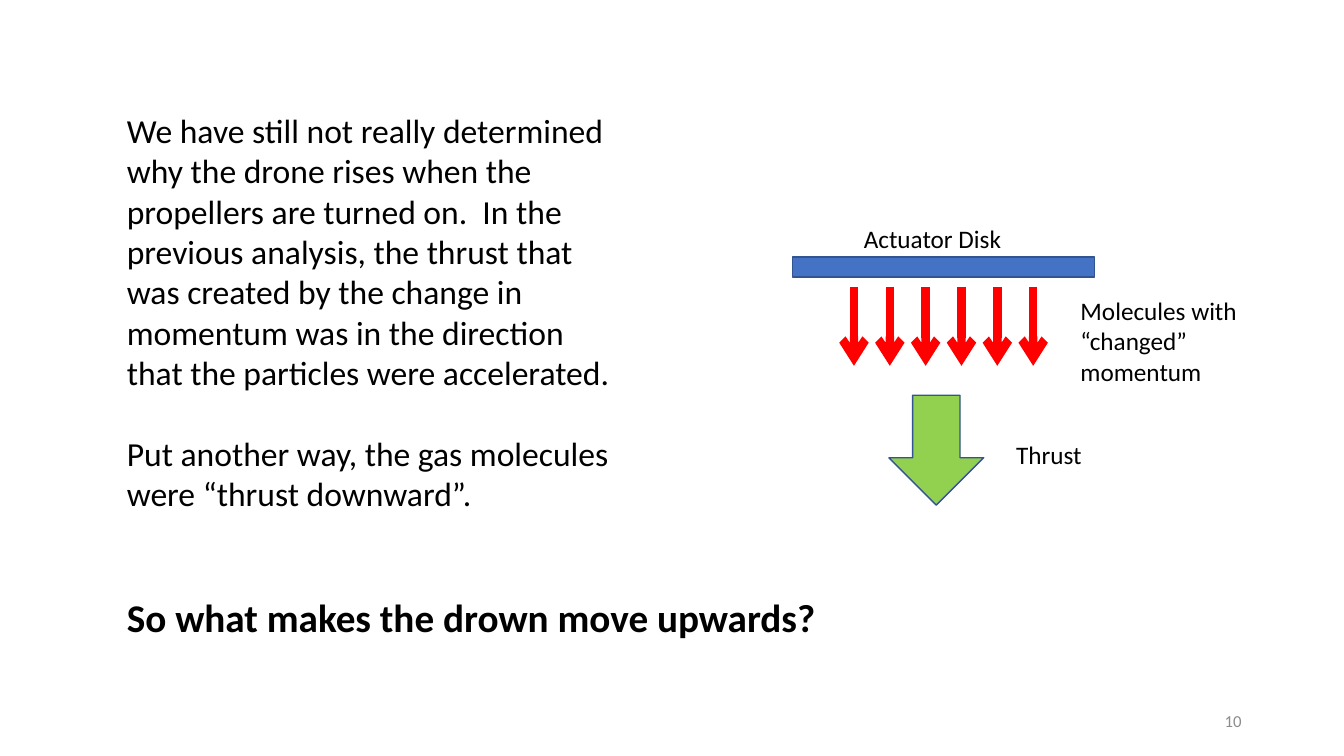
from lxml import etree
from pptx import Presentation
from pptx import util as u
from pptx.dml import color
from pptx.enum import shapes, text
from pptx.oxml import ns

Pt = u.Pt
BLACK, GREY, OUTLINE = "000000", "8C8C8C", "325491"
BLUE, GREEN, RED = "4472C4", "92D050", "FF0000"


def rgb(value):
    return color.RGBColor.from_string(value)


def add_text(page, box, paragraphs, font=None, anchor=text.MSO_ANCHOR.TOP, layout=None):
    frame = page.shapes.add_textbox(*map(Pt, box)).text_frame
    frame.word_wrap = True
    frame.vertical_anchor = anchor
    settings = {"name": "Calibri", "size": Pt(18), **(font or {})}
    ink = settings.pop("ink", BLACK)
    for index, wording in enumerate(paragraphs):
        para = frame.add_paragraph() if index else frame.paragraphs[0]
        for name, value in (layout or {}).items():
            if name != "space_before" or index:
                setattr(para, name, value)
        span = para.add_run()
        span.text = wording
        span.font.color.rgb = rgb(ink)
        for name, value in settings.items():
            setattr(span.font, name, value)


def add_block(page, kind, box, fill):
    block = page.shapes.add_shape(kind, *map(Pt, box))
    block.shadow.inherit = False
    block.fill.solid()
    block.fill.fore_color.rgb = rgb(fill)
    block.line.color.rgb = rgb(OUTLINE)
    block.line.width = Pt(1)


def add_arrow(page, x, top, bottom):
    arrow = page.shapes.add_connector(
        shapes.MSO_CONNECTOR.STRAIGHT, Pt(x), Pt(top), Pt(x), Pt(bottom))
    arrow.line.color.rgb = rgb(RED)
    arrow.line.width = Pt(6)
    # Arrowhead and no shadow
    properties = arrow.line._get_or_add_ln()
    etree.SubElement(properties, ns.qn("a:tailEnd"), type="arrow")
    etree.SubElement(arrow._element.spPr, ns.qn("a:effectLst"))


def explanation(page, left, top, width):
    add_text(page, (left, top, width, 298), [
        "We have still not really determined why the drone rises when the "
        "propellers are turned on.  In the previous analysis, the thrust that "
        "was created by the change in momentum was in the direction that the "
        "particles were accelerated.",
        "Put another way, the gas molecules were “thrust downward”.",
    ], {"size": Pt(24)}, layout={"space_before": Pt(29)})


def thrust_diagram(page, left, top):
    # Molecules pushed down by the disk
    for index in range(6):
        add_arrow(page, left + 44 + index * 25.6, top + 48.5, top + 105)
    # Disk and thrust
    add_block(page, shapes.MSO_SHAPE.RECTANGLE, (left, top + 27.2, 216, 14.4), BLUE)
    add_block(page, shapes.MSO_SHAPE.DOWN_ARROW, (left + 69, top + 126, 67.7, 78.5), GREEN)
    # Labels
    for x, y, height, label in (
        (44, 0, 29, "Actuator Disk"),
        (198.7, 51.2, 73, "Molecules with “changed” momentum"),
        (152.7, 154, 29, "Thrust"),
    ):
        add_text(page, (left + x, top + y, 134.6, height), [label])


def closing_question(page, left, top, width):
    add_text(page, (left, top, width, 41), ["So what makes the drown move upwards?"],
             {"size": Pt(28), "bold": True})


def page_number(page, left, top):
    add_text(page, (left, top, 216, 28.8), ["10"], {"size": Pt(12), "ink": GREY},
             text.MSO_ANCHOR.MIDDLE, {"alignment": text.PP_ALIGN.RIGHT})


def main():
    deck = Presentation()
    deck.slide_width, deck.slide_height = Pt(960), Pt(540)
    page = deck.slides.add_slide(deck.slide_layouts[6])
    explanation(page, 83.5, 75, 368.6)
    thrust_diagram(page, 566, 156.3)
    closing_question(page, 83.5, 420.5, 576.7)
    page_number(page, 678, 500.5)
    deck.save("out.pptx")


if __name__ == "__main__":
    main()
